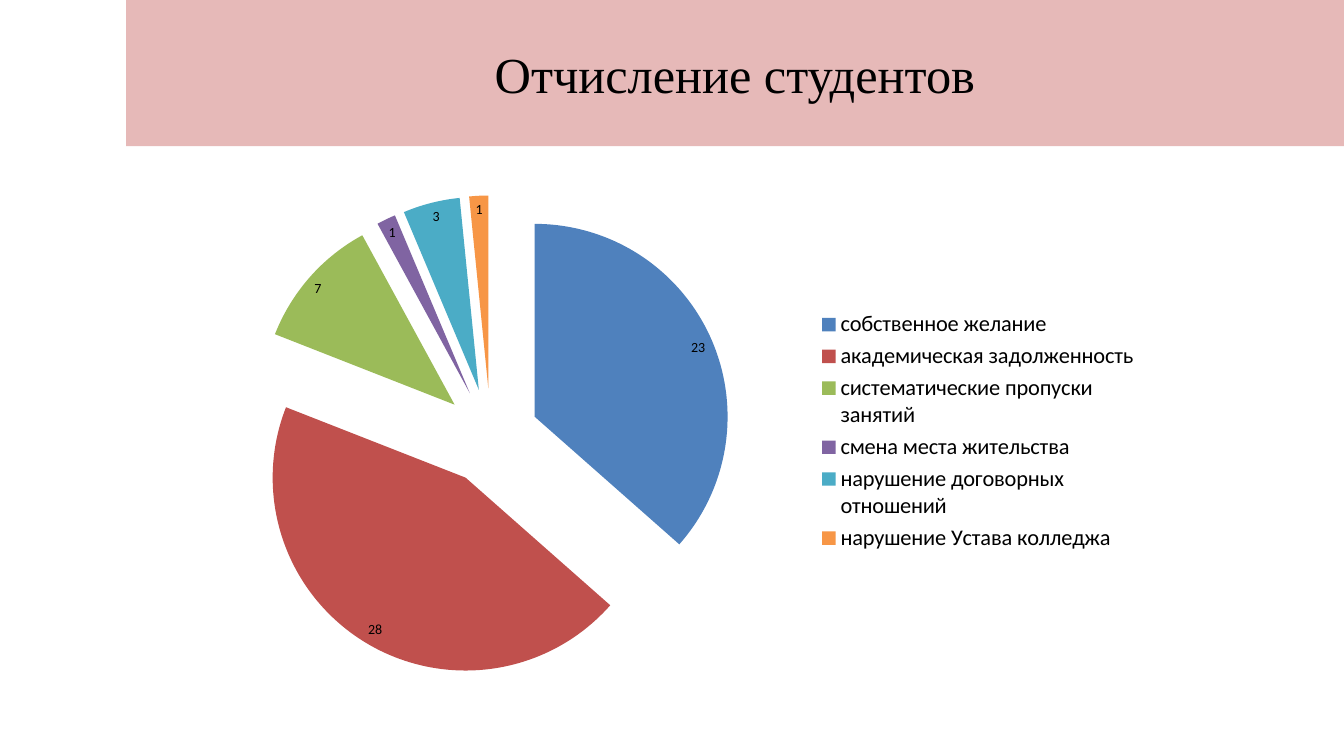
from lxml import etree
from pptx import Presentation
from pptx.chart.data import CategoryChartData
from pptx.dml.color import RGBColor
from pptx.enum.chart import XL_CHART_TYPE, XL_LABEL_POSITION, XL_LEGEND_POSITION
from pptx.enum.shapes import MSO_SHAPE
from pptx.enum.text import MSO_ANCHOR, PP_ALIGN
from pptx.oxml import parse_xml
from pptx.oxml.ns import qn
from pptx.util import Inches, Pt

BLACK = RGBColor(0x00, 0x00, 0x00)
WHITE = RGBColor(0xFF, 0xFF, 0xFF)
PINK = RGBColor(0xE6, 0xB9, 0xB8)
BLUE = RGBColor(0x4F, 0x81, 0xBD)
RED = RGBColor(0xC0, 0x50, 0x4D)
GREEN = RGBColor(0x9B, 0xBB, 0x59)
PURPLE = RGBColor(0x80, 0x64, 0xA2)
TEAL = RGBColor(0x4B, 0xAC, 0xC6)
ORANGE = RGBColor(0xF7, 0x96, 0x46)

REASONS = [
    ("собственное желание", 23, BLUE),
    ("академическая задолженность", 28, RED),
    ("систематические пропуски занятий", 7, GREEN),
    ("смена места жительства", 1, PURPLE),
    ("нарушение договорных отношений", 3, TEAL),
    ("нарушение Устава колледжа", 1, ORANGE),
]
PIE_AREA = {"x": 0.08, "y": 0.05, "w": 0.5, "h": 0.92}

prs = Presentation()
prs.slide_width, prs.slide_height = Inches(13.33), Inches(7.5)
s = prs.slides.add_slide(prs.slide_layouts[6])
s.background.fill.solid()
s.background.fill.fore_color.rgb = WHITE

left = Inches(1.25)
sp = s.shapes.add_shape(MSO_SHAPE.RECTANGLE, left, 0, prs.slide_width - left, Inches(1.45))
sp.shadow.inherit = False
sp.fill.solid()
sp.fill.fore_color.rgb = PINK
sp.line.fill.background()
tf = sp.text_frame
tf.word_wrap = True
tf.vertical_anchor = MSO_ANCHOR.MIDDLE
p = tf.paragraphs[0]
p.alignment = PP_ALIGN.CENTER
r = p.add_run()
r.text = "Отчисление студентов"
r.font.color.rgb = BLACK
for name, value in {"name": "Times New Roman", "size": Pt(36), "bold": False}.items():
    setattr(r.font, name, value)

data = CategoryChartData()
data.categories = [reason for reason, count, color in REASONS]
data.add_series("Series 1", [count for reason, count, color in REASONS])
chart = s.shapes.add_chart(
    XL_CHART_TYPE.PIE, Inches(1.65), Inches(1.68), Inches(9.75), Inches(5.2), data
).chart
chart.has_title = False
chart.has_legend = True
chart.legend.position = XL_LEGEND_POSITION.RIGHT
chart.legend.include_in_layout = False

plot = chart.plots[0]
plot.vary_by_categories = True
plot.has_data_labels = True
labels = plot.data_labels
labels.show_value = True
labels.show_percentage = False
labels.position = XL_LABEL_POSITION.INSIDE_END

for font, size in ((chart.font, 10), (chart.legend.font, 16), (labels.font, 10)):
    font.color.rgb = BLACK
    for name, value in {"name": "Calibri", "size": Pt(size), "bold": False}.items():
        setattr(font, name, value)

series = plot.series[0]
for i, (reason, count, color) in enumerate(REASONS):
    fmt = series.points[i].format
    fmt.fill.solid()
    fmt.fill.fore_color.rgb = color
    fmt.line.fill.background()

C = "http://schemas.openxmlformats.org/drawingml/2006/chart"
explosion = parse_xml(f'<c:explosion xmlns:c="{C}" val="25"/>')
series._element.find(qn("c:dPt")).addprevious(explosion)

area = chart._chartSpace.find(".//" + qn("c:plotArea"))
for old in area.findall(qn("c:layout")):
    area.remove(old)
layout = etree.Element(qn("c:layout"))
manual = etree.SubElement(layout, qn("c:manualLayout"))
modes = {"layoutTarget": "inner", "xMode": "edge", "yMode": "edge"}
for tag, value in {**modes, **PIE_AREA}.items():
    etree.SubElement(manual, qn("c:" + tag), val=str(value))
area.insert(0, layout)

prs.save("out.pptx")
